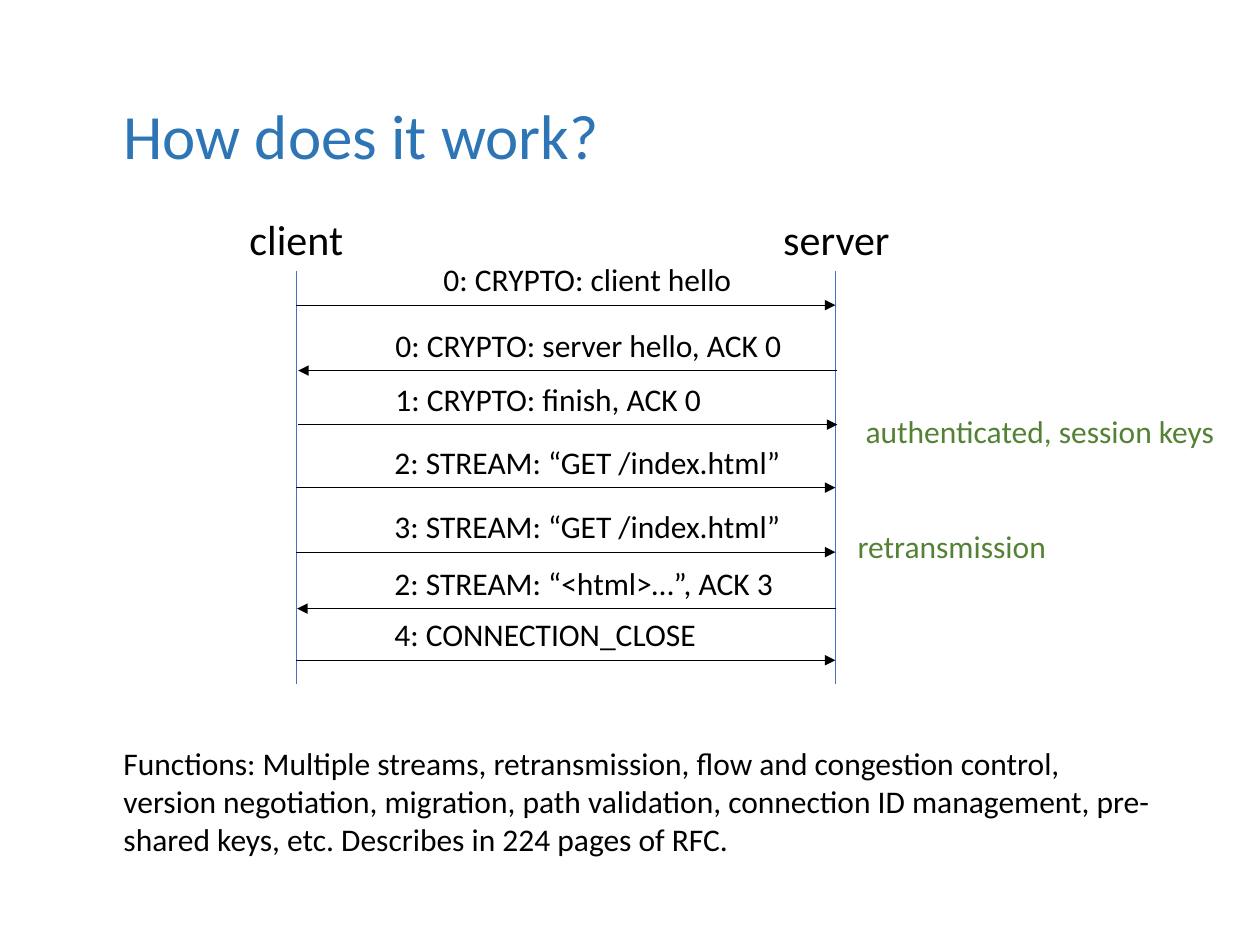
from pptx import Presentation, util as u
from pptx.dml.color import RGBColor
from pptx.enum import shapes, text
from pptx.oxml.ns import qn
from lxml import etree

# Content: all lengths in cm
TITLE = ("How does it work?", 2.24, 1.83, 21.51, 1.8)
SUMMARY = ("Functions: Multiple streams, retransmission, flow and congestion "
           "control, version negotiation, migration, path validation, "
           "connection ID management, pre-shared keys, etc. Describes in "
           "224 pages of RFC.", 2.24, 14.88, 21.26, 2.57)
# name, label left, label width, lifeline x
PEERS = [("client", 4.78, 2.41, 5.97), ("server", 15.54, 2.69, 16.84)]
# sender, text, arrow y, label left, label width, arrow shift
MESSAGES = [
    ("client", "0: CRYPTO: client hello", 6.15, 8.69, 6.38, 0),
    ("server", "0: CRYPTO: server hello, ACK 0", 7.47, 7.72, 8.38, 0.04),
    ("client", "1: CRYPTO: finish, ACK 0", 8.56, 7.72, 6.76, 0.04),
    ("client", "2: STREAM: “GET /index.html”", 9.83, 7.7, 8.38, 0),
    ("client", "3: STREAM: “GET /index.html”", 11.13, 7.7, 8.38, 0),
    ("server", "2: STREAM: “<html>…”, ACK 3", 12.27, 7.7, 8.23, 0.02),
    ("client", "4: CONNECTION_CLOSE", 13.31, 7.7, 6.65, 0),
]
NOTES = [("authenticated, session keys", 17.2, 8.18, 7.62),
         ("retransmission", 17.04, 10.49, 4.34)]

THEME = dict(font="Calibri", title="2E75B6", ink="000000", note="548235",
             life="4472C4", big=36, mid=24, body=18, line=0.5)
HEAD_Y, HEAD_H = 4.17, 1.27
LIFE_TOP, LIFE_END = 5.46, 13.79
ROW_H, LIFT = 1.02, 1.03

deck = Presentation()
deck.slide_width, deck.slide_height = u.Cm(25.4), u.Cm(19.05)
slide = deck.slides.add_slide(deck.slide_layouts[6])


def write(words, x, y, w, h, size="body", color="ink", wrap=False):
    box = slide.shapes.add_textbox(u.Cm(x), u.Cm(y), u.Cm(w), u.Cm(h))
    frame = box.text_frame
    frame.word_wrap = wrap
    frame.auto_size = text.MSO_AUTO_SIZE.SHAPE_TO_FIT_TEXT
    run = frame.paragraphs[0].add_run()
    run.text = words
    run.font.name = THEME["font"]
    run.font.size = u.Pt(THEME[size])
    run.font.color.rgb = RGBColor.from_string(THEME[color])


def draw(x1, y1, x2, y2, color, arrow=False):
    line = slide.shapes.add_connector(
        shapes.MSO_CONNECTOR.STRAIGHT, u.Cm(x1), u.Cm(y1), u.Cm(x2), u.Cm(y2))
    line.line.width = u.Pt(THEME["line"])
    line.line.color.rgb = RGBColor.from_string(THEME[color])
    if arrow:
        tail = etree.SubElement(line.line._get_or_add_ln(), qn("a:tailEnd"))
        tail.set("type", "triangle")
    etree.SubElement(line._element.spPr, qn("a:effectLst"))


# Title
write(*TITLE, size="big", color="title", wrap=True)

# Peers and their lifelines
for name, left, width, x in PEERS:
    write(name, left, HEAD_Y, width, HEAD_H, size="mid")
    draw(x, LIFE_TOP, x, LIFE_END, "life")

# Messages, each arrow running from its sender to the other peer
ends = [peer[3] for peer in PEERS]
for sender, words, y, left, width, shift in MESSAGES:
    start, stop = ends if sender == "client" else reversed(ends)
    draw(start + shift, y, stop + shift, y, "ink", arrow=True)
    write(words, left, y - LIFT, width, ROW_H)

# Side notes
for words, left, top, width in NOTES:
    write(words, left, top, width, ROW_H, color="note")

# Summary
write(*SUMMARY, wrap=True)

deck.save("out.pptx")
